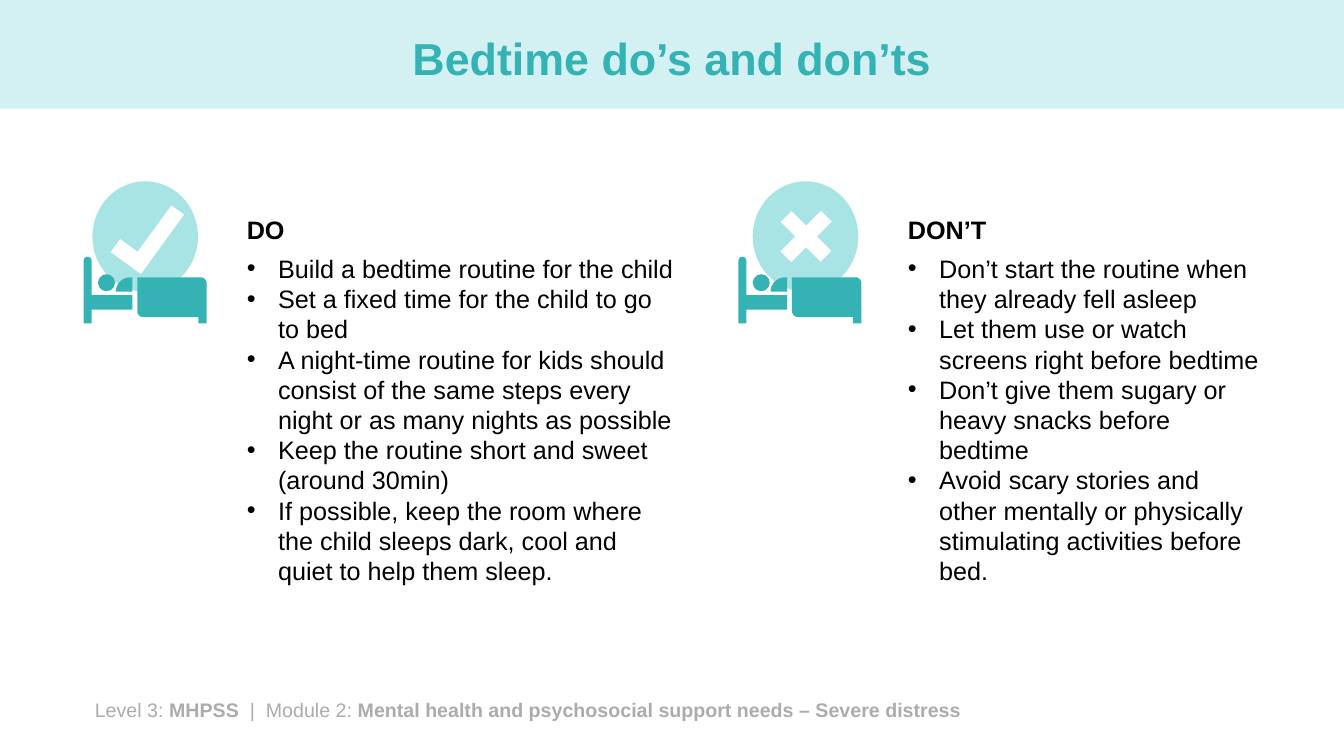
import math

import lxml.etree
import pptx
import pptx.dml.color
import pptx.enum.shapes
import pptx.enum.text
import pptx.oxml.ns
import pptx.util

Cm = pptx.util.Cm
Pt = pptx.util.Pt
PRESET = pptx.enum.shapes.MSO_SHAPE
ALIGN = pptx.enum.text.PP_ALIGN
ANCHOR = pptx.enum.text.MSO_ANCHOR
FIT = pptx.enum.text.MSO_AUTO_SIZE

COLOURS = {
    "band": "D3F1F2",
    "teal": "35B2B4",
    "circle": "A9E4E5",
    "white": "FFFFFF",
    "body": "000000",
    "footer": "AEABAB",
}

DO_ITEMS = [
    "Build a bedtime routine for the child",
    "Set a fixed time for the child to go to bed",
    "A night-time routine for kids should consist of the same steps every night or as many nights as possible",
    "Keep the routine short and sweet (around 30min)",
    "If possible, keep the room where the child sleeps dark, cool and quiet to help them sleep.",
]
DONT_ITEMS = [
    "Don’t start the routine when they already fell asleep",
    "Let them use or watch screens right before bedtime",
    "Don’t give them sugary or heavy snacks before bedtime",
    "Avoid scary stories and other mentally or physically stimulating activities before bed.",
]


def rgb(name):
    return pptx.dml.color.RGBColor.from_string(COLOURS[name])


def write(paragraph, text, size=18, colour="body", bold=False, font="Arial"):
    run = paragraph.add_run()
    run.text = text
    run.font.name = font
    run.font.size = Pt(size)
    run.font.bold = bold
    run.font.color.rgb = rgb(colour)


def arc(x, y, radius, start, end, steps=8):
    angles = [math.radians(start + (end - start) * i / steps) for i in range(steps + 1)]
    return [(x + radius * math.cos(a), y + radius * math.sin(a)) for a in angles]


class BedtimeSlide:
    def __init__(self, deck):
        self.slide = deck.slides.add_slide(deck.slide_layouts[6])
        self.shapes = self.slide.shapes

    def paint(self, shape, colour):
        shape.shadow.inherit = False
        shape.fill.solid()
        shape.fill.fore_color.rgb = rgb(colour)
        shape.line.fill.background()

    def preset(self, kind, left, top, width, height, colour, rotation=0, adjust=()):
        shape = self.shapes.add_shape(kind, Cm(left), Cm(top), Cm(width), Cm(height))
        self.paint(shape, colour)
        shape.rotation = rotation
        for index, value in enumerate(adjust):
            shape.adjustments[index] = value

    def outline(self, left, top, points, colour):
        corners = [(Cm(x), Cm(y)) for x, y in points]
        builder = self.shapes.build_freeform(*corners[0])
        builder.add_line_segments(corners[1:], close=True)
        self.paint(builder.convert_to_shape(Cm(left), Cm(top)), colour)

    def text_frame(self, left, top, width, height, fit=FIT.SHAPE_TO_FIT_TEXT):
        frame = self.shapes.add_textbox(Cm(left), Cm(top), Cm(width), Cm(height)).text_frame
        frame.word_wrap = True
        frame.auto_size = fit
        return frame

    def title(self, text):
        frame = self.text_frame(2.33, 0.34, 29.21, 2.4, FIT.NONE)
        frame.vertical_anchor = ANCHOR.MIDDLE
        heading = frame.paragraphs[0]
        heading.alignment = ALIGN.CENTER
        heading.line_spacing = 0.9
        write(heading, text, size=32, colour="teal", bold=True)

    def footer(self, parts):
        line = self.text_frame(2.14, 17.45, 28.83, 0.86).paragraphs[0]
        for text, bold in parts:
            write(line, text, size=14, colour="footer", bold=bold)

    def bullet(self, paragraph):
        properties = paragraph._p.get_or_add_pPr()
        indent = Cm(0.79)
        properties.set("marL", str(indent))
        properties.set("indent", str(-indent))
        tag = pptx.oxml.ns.qn
        colour = lxml.etree.SubElement(properties, tag("a:buClr"))
        lxml.etree.SubElement(colour, tag("a:srgbClr"), val=COLOURS["body"])
        lxml.etree.SubElement(properties, tag("a:buFont"), typeface="Arial")
        lxml.etree.SubElement(properties, tag("a:buChar"), char="•")

    def advice(self, left, width, heading, items):
        frame = self.text_frame(left, 5.28, width, 9.7)
        write(frame.paragraphs[0], heading, bold=True)
        for index, item in enumerate(items):
            paragraph = frame.add_paragraph()
            paragraph.space_before = Pt(0 if index else 6)
            self.bullet(paragraph)
            write(paragraph, item)

    def circle(self, left):
        self.preset(PRESET.OVAL, left, 4.57, 2.66, 2.78, "circle")

    def bed(self, left):
        top = 6.46
        pillow = arc(1.17, 0.89, 0.36, 180, 270) + [(1.23, 0.53), (1.23, 0.89)]
        blanket = (
            [(1.35, 0.53)]
            + arc(2.95, 0.68, 0.15, 270, 360)
            + [(3.1, 1.69), (2.89, 1.69), (2.89, 1.53)]
            + arc(1.5, 1.38, 0.15, 90, 180)
        )
        frame = arc(0.1, 0.11, 0.1, 180, 360) + [
            (0.2, 0.98), (1.23, 0.98), (1.23, 1.34), (0.2, 1.34), (0.2, 1.69), (0, 1.69),
        ]
        self.preset(PRESET.OVAL, left + 0.36, top + 0.45, 0.43, 0.43, "teal")
        for points in (pillow, blanket, frame):
            self.outline(left, top, points, "teal")


def main():
    deck = pptx.Presentation()
    deck.slide_width, deck.slide_height = Cm(33.87), Cm(19.05)
    page = BedtimeSlide(deck)
    page.preset(PRESET.RECTANGLE, 0, 0, 33.87, 2.74, "band")
    page.footer([
        ("Level 3: ", False),
        ("MHPSS ", True),
        (" |  Module 2: ", False),
        ("Mental health and psychosocial support needs – Severe distress", True),
    ])
    page.title("Bedtime do’s and don’ts")
    page.circle(2.33)
    page.preset(PRESET.CORNER, 2.79, 5.41, 1.85, 0.94, "white", 306, (0.42, 0.43))
    page.circle(18.97)
    page.preset(PRESET.MATH_PLUS, 19.35, 4.98, 1.93, 1.96, "white", 45, (0.2,))
    page.advice(5.97, 11.28, "DO", DO_ITEMS)
    page.advice(22.63, 9.45, "DON’T", DONT_ITEMS)
    for left in (2.11, 18.61):
        page.bed(left)
    deck.save("out.pptx")


if __name__ == "__main__":
    main()
